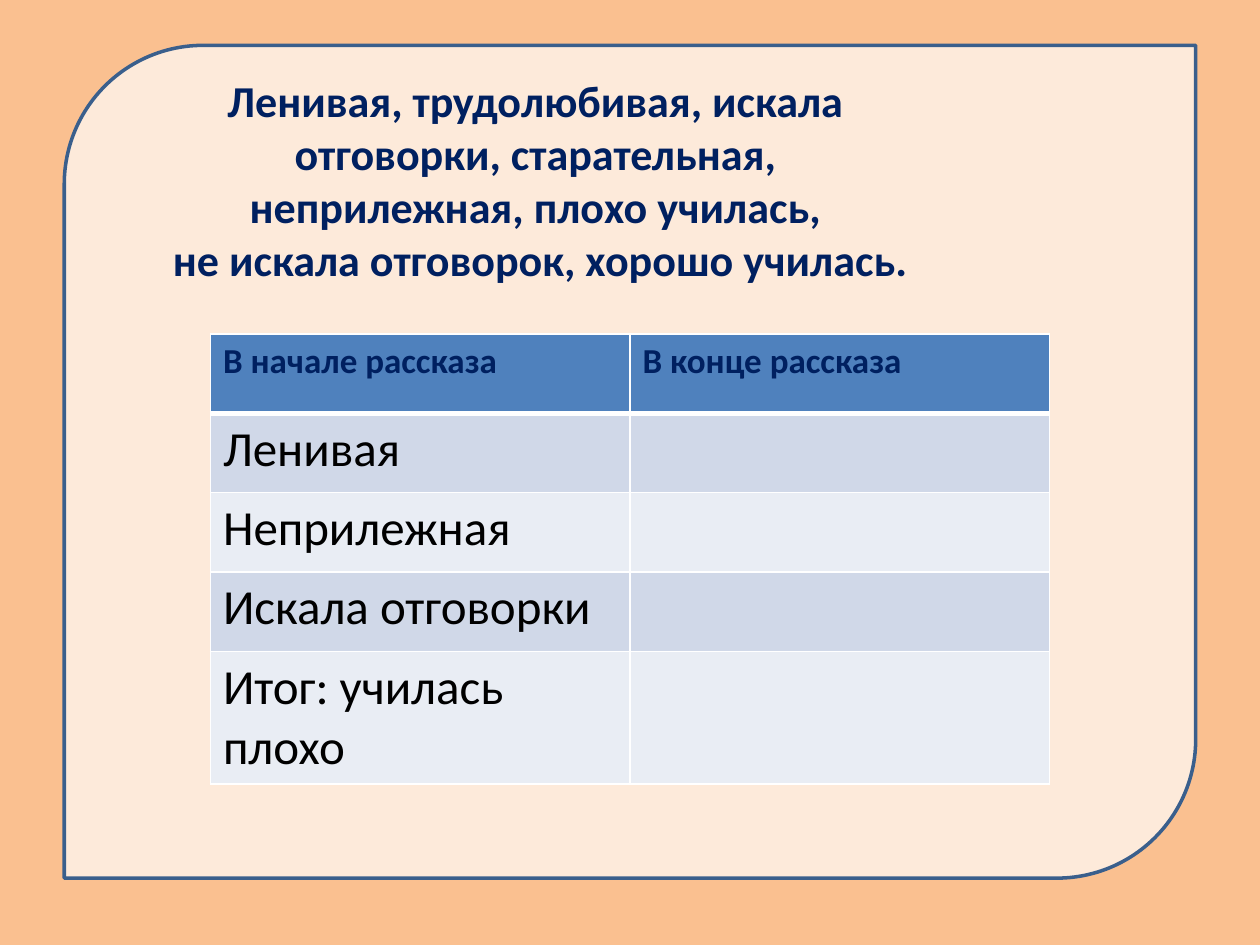
from dataclasses import dataclass

from lxml.etree import SubElement
from pptx import Presentation
from pptx.dml.color import RGBColor
from pptx.enum.shapes import MSO_SHAPE
from pptx.enum.text import MSO_ANCHOR, PP_ALIGN
from pptx.oxml.ns import qn
from pptx.util import Inches, Pt

TITLE_LINES = [
    "Ленивая, трудолюбивая, искала отговорки, старательная,",
    "неприлежная, плохо училась,",
    " не искала отговорок, хорошо училась.",
]
TABLE_ROWS = [
    ("В начале рассказа", "В конце рассказа"),
    ("Ленивая", ""),
    ("Неприлежная", ""),
    ("Искала отговорки", ""),
    ("Итог: училась плохо", ""),
]
PANEL_BOX = (0.51, 0.36, 8.98, 6.61)
TITLE_BOX = (0.98, 0.44, 6.54, 1.97)
TABLE_LEFT, TABLE_TOP = 1.67, 2.65
COLUMN_WIDTH, ROW_HEIGHT = 3.33, 0.63


@dataclass(frozen=True)
class Theme:
    font: str = "Calibri"
    background: str = "FAC090"
    panel: str = "FDEADA"
    outline: str = "3A5F8C"
    heading: str = "002060"
    body: str = "000000"
    header_fill: str = "4F81BD"
    band_fills: tuple = ("D0D8E8", "E9EDF4")
    border: str = "FFFFFF"
    title_size: float = 25.2
    header_size: float = 20
    body_size: float = 28


THEME = Theme()


def paint(fill, color):
    fill.solid()
    fill.fore_color.rgb = RGBColor.from_string(color)


def add_run(paragraph, text, size, color, bold):
    run = paragraph.add_run()
    run.text = text
    run.font.name = THEME.font
    run.font.size = Pt(size)
    run.font.bold = bold
    run.font.color.rgb = RGBColor.from_string(color)


def set_borders(cell, widths):
    properties = cell._tc.get_or_add_tcPr()
    for index, (side, width) in enumerate(widths.items()):
        line = properties.makeelement(qn(f"a:{side}"), {"w": str(Pt(width))})
        solid = SubElement(line, qn("a:solidFill"))
        SubElement(solid, qn("a:srgbClr"), val=THEME.border)
        properties.insert(index, line)


def add_panel(slide):
    panel = slide.shapes.add_shape(
        MSO_SHAPE.ROUND_2_DIAG_RECTANGLE, *map(Inches, PANEL_BOX)
    )
    panel.shadow.inherit = False
    paint(panel.fill, THEME.panel)
    paint(panel.line.fill, THEME.outline)
    panel.line.width = Pt(2)
    slide.shapes._spTree.insert(2, panel._element)


def fill_title(title):
    title.left, title.top, title.width, title.height = map(Inches, TITLE_BOX)
    frame = title.text_frame
    frame.word_wrap = True
    frame.vertical_anchor = MSO_ANCHOR.MIDDLE
    paragraph = frame.paragraphs[0]
    paragraph.alignment = PP_ALIGN.CENTER
    for index, text in enumerate(TITLE_LINES):
        if index:
            paragraph.add_line_break()
        add_run(paragraph, text, THEME.title_size, THEME.heading, True)


def add_comparison_table(slide):
    row_count, column_count = len(TABLE_ROWS), len(TABLE_ROWS[0])
    table = slide.shapes.add_table(
        row_count, column_count, Inches(TABLE_LEFT), Inches(TABLE_TOP),
        Inches(COLUMN_WIDTH * column_count), Inches(ROW_HEIGHT * row_count),
    ).table
    for row_index, texts in enumerate(TABLE_ROWS):
        is_header = row_index == 0
        fill = THEME.header_fill if is_header else THEME.band_fills[(row_index - 1) % 2]
        size = THEME.header_size if is_header else THEME.body_size
        color = THEME.heading if is_header else THEME.body
        widths = {
            "lnL": 1,
            "lnR": 1,
            "lnT": 3 if row_index == 1 else 1,
            "lnB": 3 if is_header else 1,
        }
        for column_index, text in enumerate(texts):
            cell = table.cell(row_index, column_index)
            paint(cell.fill, fill)
            set_borders(cell, widths)
            if text:
                add_run(cell.text_frame.paragraphs[0], text, size, color, is_header)


def main():
    presentation = Presentation()
    presentation.slide_width, presentation.slide_height = Inches(10), Inches(7.5)
    slide = presentation.slides.add_slide(presentation.slide_layouts[0])
    paint(slide.background.fill, THEME.background)
    subtitle = slide.placeholders[1]._element
    subtitle.getparent().remove(subtitle)
    add_panel(slide)
    fill_title(slide.shapes.title)
    add_comparison_table(slide)
    presentation.save("out.pptx")


if __name__ == "__main__":
    main()
